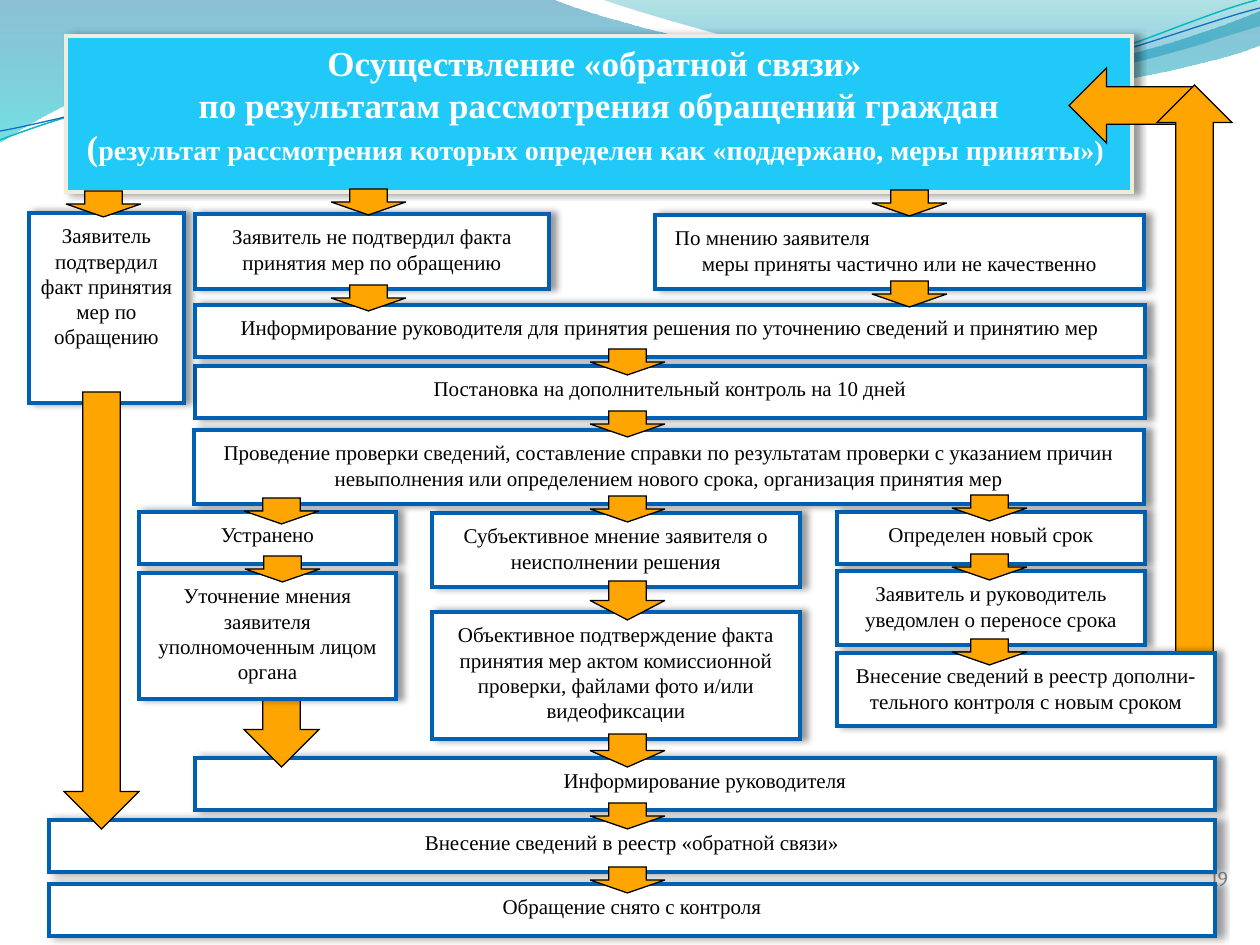
from dataclasses import dataclass
from math import cos, radians, sin

from lxml import etree
from pptx import Presentation
from pptx import util as u
from pptx.dml.color import RGBColor
from pptx.enum import shapes, text
from pptx.oxml.ns import qn


@dataclass(frozen=True)
class Theme:
    heading_fill: str = "20C9F8"
    heading_line: str = "EEECE1"
    white: str = "FFFFFF"
    black: str = "000000"
    step_line: str = "0061B2"
    arrow: str = "FEA501"
    number: str = "8C8C8C"
    font: str = "Times New Roman"
    number_font: str = "Cambria"
    heading_size: int = 20
    note_size: int = 16
    body_size: int = 12
    box_line: float = 2.25
    arrow_line: float = 0.75


THEME = Theme()
WIDTH, HEIGHT = 1260, 945
INSET = 10
ARROW_WIDTH, ARROW_HEIGHT = 75, 26
LEFT_COLUMN, MIDDLE_COLUMN, RIGHT_COLUMN = 244, 590, 952
TILT, PIVOT = 2.7, (629, 73)

WAVES = [
    ((0, 0), [[(554, 0)], [(600, 21), (837, 79), (955, 79)],
              [(1075, 79), (1207, 33), (1260, 11)], [(1260, 45)],
              [(1239, 55), (1096, 96), (940, 95)],
              [(784, 95), (481, 35), (324, 43)],
              [(163, 45), (58, 105), (0, 142)]],
     [(0, "0074A1", 45), (1, "00C6CF", 55)]),
    ((603, 0), [[(641, 14), (859, 78), (969, 82)],
                [(1079, 87), (1211, 40), (1260, 26)], [(1260, 0)]],
     [(0, "00A1A9", 30), (0.8, "008BBF", 45)]),
]
STRANDS = [
    ((0, 140), [[(60, 117), (199, 72), (349, 66)],
                [(498, 59), (747, 112), (898, 101)],
                [(1050, 89), (1182, 19), (1257, 0)]], "0AB8BF", 0.85),
    ((0, 131), [[(59, 121), (207, 77), (357, 71)],
                [(508, 64), (751, 106), (903, 95)],
                [(1053, 84), (1187, 26), (1260, 8)]], "0F6FC6", 0.75),
]


def px(length):
    return u.Emu(round(length * 914400 / 126))


def paint(shape, fill, line, weight):
    shape.shadow.inherit = False
    shape.fill.solid()
    shape.fill.fore_color.rgb = RGBColor.from_string(fill)
    shape.line.color.rgb = RGBColor.from_string(line)
    shape.line.width = u.Pt(weight)
    etree.SubElement(shape.element.spPr.find(qn("a:ln")), qn("a:miter"), lim="800000")


def cast_shadow(shape):
    effects = shape.element.spPr.find(qn("a:effectLst"))
    shadow = etree.SubElement(effects, qn("a:outerShdw"), blurRad=str(u.Pt(4)),
                              dist=str(u.Pt(3)), dir="0", algn="tl", rotWithShape="0")
    color = etree.SubElement(shadow, qn("a:srgbClr"), val=THEME.black)
    etree.SubElement(color, qn("a:alpha"), val="40000")


def set_font(font, size, color, name=THEME.font, bold=False):
    font.name, font.size, font.bold = name, u.Pt(size), bold
    font.color.rgb = RGBColor.from_string(color)


def set_frame(frame, top=INSET, side=INSET, anchor=text.MSO_ANCHOR.TOP):
    frame.word_wrap = True
    frame.vertical_anchor = anchor
    frame.margin_left = frame.margin_right = frame.margin_bottom = px(side)
    frame.margin_top = px(top)


def add_box(slide, bounds, fill, line):
    box = slide.shapes.add_shape(shapes.MSO_SHAPE.RECTANGLE, *map(px, bounds))
    paint(box, fill, line, THEME.box_line)
    cast_shadow(box)
    return box


def add_heading(slide):
    heading = add_box(slide, (66, 36, 1066, 156), THEME.heading_fill, THEME.heading_line)
    frame = heading.text_frame
    set_frame(frame, top=5)
    frame.text = ("Осуществление «обратной связи» \n"
                  "по результатам рассмотрения обращений граждан\n(")
    for paragraph in frame.paragraphs:
        paragraph.alignment = text.PP_ALIGN.CENTER
        set_font(paragraph.font, THEME.heading_size, THEME.white, bold=True)
    note = frame.paragraphs[-1].add_run()
    note.text = "результат рассмотрения которых определен как «поддержано, меры приняты») "
    note.font.size = u.Pt(THEME.note_size)


def add_step(slide, left, top, width, height, wording):
    step = add_box(slide, (left, top, width, height), THEME.white, THEME.step_line)
    frame = step.text_frame
    set_frame(frame)
    frame.text = wording
    for paragraph in frame.paragraphs:
        paragraph.alignment = text.PP_ALIGN.CENTER
        set_font(paragraph.font, THEME.body_size, THEME.black)
    frame.paragraphs[-1].space_after = u.Pt(6)
    return frame


def add_partial_step(slide, *step):
    opening = add_step(slide, *step).paragraphs[0]
    opening.alignment = text.PP_ALIGN.LEFT
    opening._p.get_or_add_pPr().set("marL", str(px(INSET)))


def add_arrow(slide, left, top, height=ARROW_HEIGHT, rotation=0):
    arrow = slide.shapes.add_shape(shapes.MSO_SHAPE.DOWN_ARROW,
                                   *map(px, (left, top, ARROW_WIDTH, height)))
    paint(arrow, THEME.arrow, THEME.black, THEME.arrow_line)
    arrow.rotation = rotation


def add_outline(slide, start, segments, close):
    builder = slide.shapes.build_freeform(*map(px, start), scale=1.0)
    builder.add_line_segments([tuple(map(px, segment[-1])) for segment in segments], close=close)
    outline = builder.convert_to_shape()
    outline.shadow.inherit = False
    sides = outline.element.spPr.findall(".//" + qn("a:lnTo"))
    for side, segment in zip(sides, segments):
        if len(segment) == 3:
            side.tag = qn("a:cubicBezTo")
            for index, (x, y) in enumerate(segment[:2]):
                control = etree.Element(qn("a:pt"), x=str(px(x) - outline.left),
                                        y=str(px(y) - outline.top))
                side.insert(index, control)
    return outline


def add_wave(slide, start, segments, stops):
    wave = add_outline(slide, start, segments, close=True)
    wave.line.fill.background()
    wave.fill.gradient()
    wave.fill.gradient_angle = 270
    for stop, (position, color, _) in zip(wave.fill.gradient_stops, stops):
        stop.position = position
        stop.color.rgb = RGBColor.from_string(color)
    colors = wave.element.spPr.findall(".//" + qn("a:gs") + "/" + qn("a:srgbClr"))
    for color, (_, _, opacity) in zip(colors, stops):
        etree.SubElement(color, qn("a:alpha"), val=str(opacity * 1000))


def level(point):
    angle = radians(TILT)
    dx, dy = point[0] - PIVOT[0], point[1] - PIVOT[1]
    return (PIVOT[0] + dx * cos(angle) - dy * sin(angle),
            PIVOT[1] + dx * sin(angle) + dy * cos(angle))


def add_strand(slide, start, segments, color, weight):
    leveled = [[level(point) for point in segment] for segment in segments]
    strand = add_outline(slide, level(start), leveled, close=False)
    strand.rotation = 360 - TILT
    strand.fill.background()
    strand.line.color.rgb = RGBColor.from_string(color)
    strand.line.width = u.Pt(weight)


def add_page_number(slide):
    frame = slide.shapes.add_textbox(*map(px, (934, 843, 294, 48))).text_frame
    set_frame(frame, top=0, side=0, anchor=text.MSO_ANCHOR.BOTTOM)
    frame.text = "19"
    frame.paragraphs[0].alignment = text.PP_ALIGN.RIGHT
    set_font(frame.paragraphs[0].font, THEME.body_size, THEME.number, THEME.number_font)


FLOW = [
    (add_step, 195, 366, 950, 52, "Постановка на дополнительный контроль на 10 дней"),
    (add_step, 29, 213, 155, 190, "Заявитель подтвердил факт принятия мер по обращению"),
    (add_step, 139, 512, 257, 52, "Устранено"),
    (add_step, 49, 884, 1166, 52, "Обращение снято с контроля"),
    (add_step, 49, 820, 1166, 52, "Внесение сведений в реестр «обратной связи»"),
    (add_arrow, MIDDLE_COLUMN, 867), (add_arrow, 64, 392, 437),
    (add_step, 837, 512, 308, 52, "Определен новый срок"),
    (add_arrow, 1095, 42, 127, 90), (add_arrow, 1157, 85, 568, 180),
    (add_partial_step, 655, 215, 489, 74,
     "По мнению заявителя\nмеры приняты частично или не качественно"),
    (add_step, 195, 214, 354, 75, "Заявитель не подтвердил факта принятия мер по обращению"),
    (add_step, 432, 513, 368, 74, "Субъективное мнение заявителя о неисполнении решения"),
    (add_step, 194, 430, 950, 74, "Проведение проверки сведений, составление справки по "
     "результатам проверки с указанием причин невыполнения или определением нового срока, "
     "организация принятия мер"),
    (add_step, 837, 653, 378, 73,
     "Внесение сведений в реестр дополни- тельного контроля с новым сроком"),
    (add_step, 837, 571, 308, 74, "Заявитель и руководитель уведомлен о переносе срока"),
    (add_step, 195, 305, 950, 52, "Информирование руководителя для принятия решения "
     "по уточнению сведений и принятию мер"),
    (add_step, 195, 758, 1020, 52, "Информирование руководителя"),
    (add_step, 432, 612, 368, 127, "Объективное подтверждение факта принятия мер актом "
     "комиссионной проверки, файлами фото и/или видеофиксации"),
    (add_arrow, MIDDLE_COLUMN, 803), (add_arrow, LEFT_COLUMN, 691, 76),
    (add_arrow, MIDDLE_COLUMN, 734, 33), (add_arrow, MIDDLE_COLUMN, 581, 39),
    *[(add_arrow, RIGHT_COLUMN, top) for top in (639, 554)],
    *[(add_arrow, MIDDLE_COLUMN, top) for top in (496, 411, 349)],
    (add_arrow, 331, 189), (add_arrow, 872, 190), (add_arrow, 66, 191),
    (add_step, 139, 573, 257, 126, "Уточнение мнения заявителя уполномоченным лицом органа"),
    (add_arrow, 245, 556), (add_arrow, RIGHT_COLUMN, 495), (add_arrow, LEFT_COLUMN, 498),
    (add_arrow, 331, 285), (add_arrow, 872, 281),
]


def main():
    deck = Presentation()
    deck.slide_width, deck.slide_height = px(WIDTH), px(HEIGHT)
    slide = deck.slides.add_slide(deck.slide_layouts[6])
    for wave in WAVES:
        add_wave(slide, *wave)
    for strand in STRANDS:
        add_strand(slide, *strand)
    add_page_number(slide)
    add_heading(slide)
    for draw, *details in FLOW:
        draw(slide, *details)
    deck.save("out.pptx")


if __name__ == "__main__":
    main()
